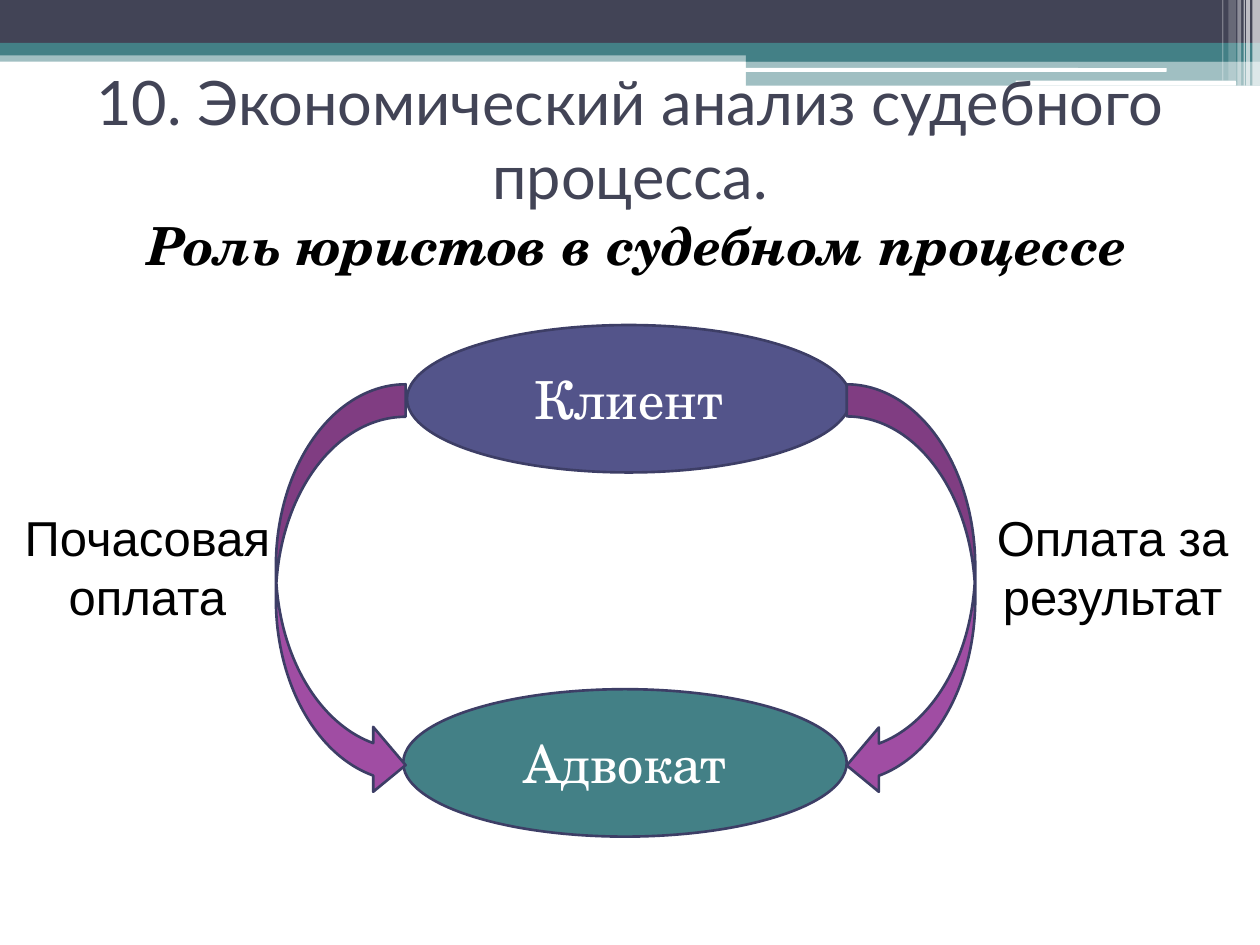
from lxml.etree import SubElement
from pptx import Presentation
from pptx.dml.color import RGBColor
from pptx.enum.shapes import MSO_SHAPE
from pptx.enum.text import MSO_ANCHOR, MSO_AUTO_SIZE, PP_ALIGN
from pptx.oxml.ns import qn
from pptx.util import Inches, Pt

NAVY, TEAL, WHITE, BLACK = "424456", "438086", "FFFFFF", "000000"
INDIGO, PURPLE, OUTLINE = "53548A", "A04DA3", "3D3E66"
SERIF = "TeX Gyre Schola"


def rgb(color):
    return RGBColor.from_string(color)


def place(sp, box):
    sp.left, sp.top, sp.width, sp.height = map(Inches, box)


def add_shape(slide, kind, box, fill, alpha=100, line=None):
    sp = slide.shapes.add_shape(kind, *map(Inches, box))
    sp.shadow.inherit = False
    sp.fill.solid()
    sp.fill.fore_color.rgb = rgb(fill)
    if alpha < 100:
        clr = sp.fill._xPr.find(".//" + qn("a:srgbClr"))
        SubElement(clr, qn("a:alpha")).set("val", str(alpha * 1000))
    if line:
        sp.line.color.rgb = rgb(line)
        sp.line.width = Pt(1.5)
    else:
        sp.line.fill.background()
    return sp


def write(sp, text, size, font, color, anchor=MSO_ANCHOR.TOP, strong=False):
    tf = sp.text_frame
    tf.word_wrap = True
    tf.vertical_anchor = anchor
    p = tf.paragraphs[0]
    p.alignment = PP_ALIGN.CENTER
    r = p.add_run()
    r.text = text
    r.font.size = Pt(size)
    r.font.name = font
    r.font.color.rgb = rgb(color)
    r.font.bold = r.font.italic = strong
    return p


def add_header_band(slide, width):
    left = 5.92
    bars = [
        (0, 0.4, width, 0.09, TEAL, 50),
        (0, 0, width, 0.34, NAVY, 100),
        (0, 0.34, width, 0.1, TEAL, 100),
        (left, 0.39, width - left, 0.1, TEAL, 100),
        (left, 0.48, width - left, 0.2, TEAL, 50),
    ]
    for *box, color, alpha in bars:
        add_shape(slide, MSO_SHAPE.RECTANGLE, box, color, alpha)
    for box in [(5.91, 0.54, 3.35, 0.03), (8.06, 0.64, 1.75, 0.04)]:
        add_shape(slide, MSO_SHAPE.ROUNDED_RECTANGLE, box, WHITE)
    stripes = [
        (9.94, 0.06, 0.68, 65), (9.89, 0.03, 0.68, 65), (9.87, 0.01, 0.68, 60),
        (9.82, 0.03, 0.68, 40), (9.75, 0.06, 0.64, 20), (9.7, 0.01, 0.64, 30),
    ]
    for x, w, h, alpha in stripes:
        add_shape(slide, MSO_SHAPE.RECTANGLE, (x, 0, w, h), WHITE, alpha)


def fill_title(slide, box, text):
    title = slide.shapes.title
    place(title, box)
    write(title, text, 35, "Lato", NAVY, MSO_ANCHOR.MIDDLE)
    title.text_frame.auto_size = MSO_AUTO_SIZE.NONE
    slide.shapes._spTree.append(title._element)


def fill_subtitle(slide, box, text):
    body = slide.placeholders[1]
    place(body, box)
    p = write(body, text, 30, SERIF, BLACK, strong=True)
    body.text_frame.auto_size = MSO_AUTO_SIZE.NONE
    p.space_before = Pt(12)
    pPr = p._p.get_or_add_pPr()
    pPr.set("marL", str(Inches(0.4)))
    pPr.set("indent", str(Inches(-0.28)))
    SubElement(pPr, qn("a:buNone"))
    slide.shapes._spTree.append(body._element)


def add_party(slide, box, text, fill):
    sp = add_shape(slide, MSO_SHAPE.OVAL, box, fill, line=OUTLINE)
    write(sp, text, 30, SERIF, WHITE, MSO_ANCHOR.MIDDLE)


def add_payment(slide, arrow_box, label_box, text, mirrored=False):
    arrow = add_shape(slide, MSO_SHAPE.CURVED_LEFT_ARROW, arrow_box, PURPLE, line=OUTLINE)
    if mirrored:
        arrow._element.spPr.find(qn("a:xfrm")).set("flipH", "1")
    label = slide.shapes.add_textbox(*map(Inches, label_box))
    write(label, text, 28, "Arial", BLACK)
    label.text_frame.auto_size = MSO_AUTO_SIZE.SHAPE_TO_FIT_TEXT


def main():
    prs = Presentation()
    prs.slide_width, prs.slide_height = Inches(10), Inches(7.5)
    slide = prs.slides.add_slide(prs.slide_layouts[1])
    add_header_band(slide, 10)
    fill_subtitle(slide, (0, 1.64, 10, 0.86), "Роль юристов в судебном процессе")
    fill_title(slide, (0, 0.47, 10, 1.25), "10. Экономический анализ судебного процесса.")
    add_party(slide, (3.23, 2.58, 3.52, 1.17), "Клиент", INDIGO)
    add_party(slide, (3.2, 5.47, 3.52, 1.17), "Адвокат", TEAL)
    add_payment(slide, (2.19, 3.05, 1.03, 3.28), (0, 3.98, 2.34, 1.04),
                "Почасовая оплата", mirrored=True)
    add_payment(slide, (6.72, 3.05, 1.02, 3.28), (7.66, 3.98, 2.34, 1.04),
                "Оплата за результат")
    prs.save("out.pptx")


if __name__ == "__main__":
    main()
